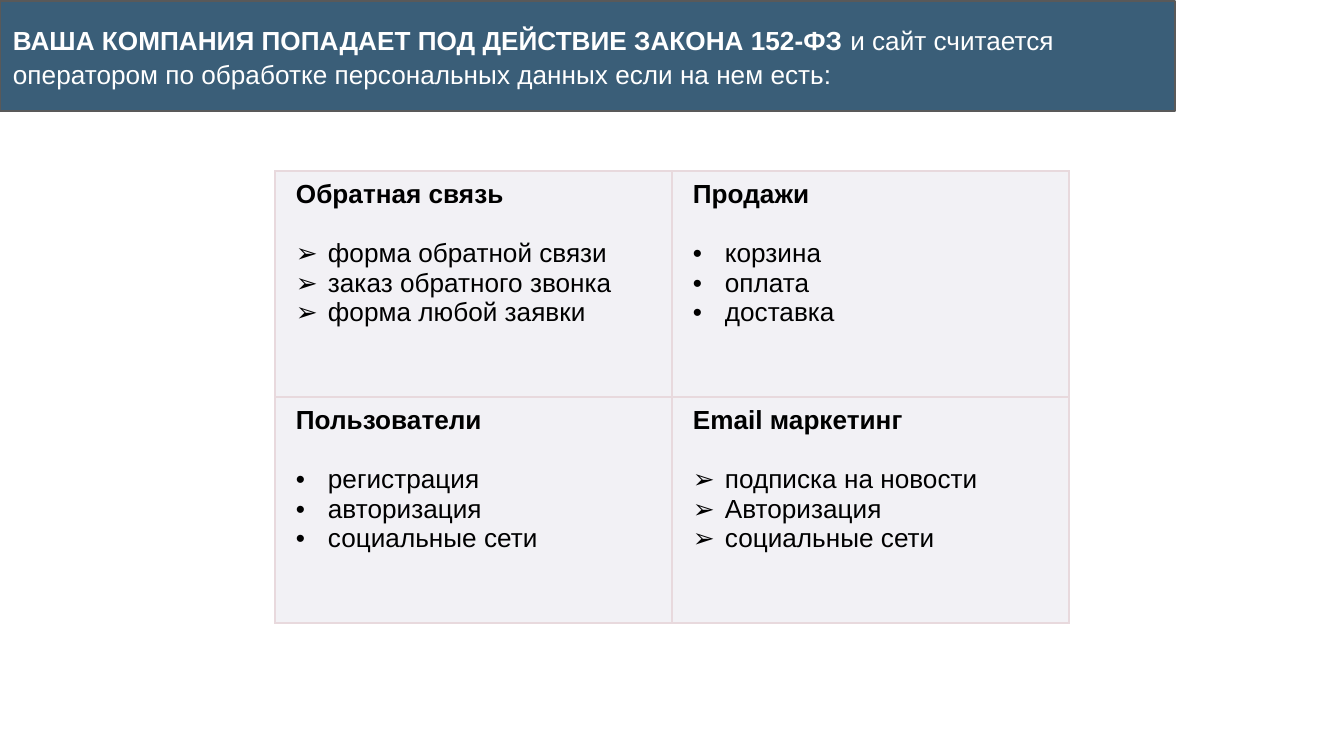
from lxml import etree
from pptx import Presentation
from pptx.dml.color import RGBColor
from pptx.enum.shapes import MSO_SHAPE
from pptx.enum.text import MSO_ANCHOR, PP_ALIGN
from pptx.oxml.ns import qn
from pptx.util import Emu, Pt

RECTANGLE = MSO_SHAPE.RECTANGLE
MIDDLE = MSO_ANCHOR.MIDDLE
LEFT = PP_ALIGN.LEFT

EMU_PER_PX = 914400 / 134.4
SLIDE_SIZE = (1344, 756)
HEADER_BOX = (0, 1, 1175, 110)
TABLE_BOX = (275, 171, 794, 452)

HEADER_FILL, HEADER_LINE = "3A5E78", "595959"
CELL_FILL, CELL_BORDER = "F2F1F5", "E8D9DD"
WHITE, BLACK = "FFFFFF", "000000"
BORDER_WIDTH = Pt(0.75)
BULLET_INDENT = 32
ARROW, DOT = "➢", "•"

HEADER_RUNS = [
    ("ВАША КОМПАНИЯ ПОПАДАЕТ ПОД ДЕЙСТВИЕ ЗАКОНА 152-ФЗ ", True),
    ("и сайт считается оператором по обработке персональных данных "
     "если на нем есть:", False),
]
FEATURES = [
    [("Обратная связь", ARROW,
      ["форма обратной связи", "заказ обратного звонка", "форма любой заявки"]),
     ("Продажи", DOT, ["корзина", "оплата", "доставка"])],
    [("Пользователи", DOT, ["регистрация", "авторизация", "социальные сети"]),
     ("Email маркетинг", ARROW,
      ["подписка на новости", "Авторизация", "социальные сети"])],
]


def px(length):
    return Emu(round(length * EMU_PER_PX))


def color(hex_string):
    return RGBColor.from_string(hex_string)


def set_attributes(target, values):
    for name, value in values.items():
        setattr(target, name, value)


def add_run(paragraph, text, bold, hex_string):
    run = paragraph.add_run()
    run.text = text
    set_attributes(run.font, {"name": "Arial", "size": Pt(14), "bold": bold})
    run.font.color.rgb = color(hex_string)


def add_bullet(paragraph, character):
    properties = paragraph._p.get_or_add_pPr()
    properties.set("marL", str(px(BULLET_INDENT)))
    properties.set("indent", str(-px(BULLET_INDENT)))
    bullet_color = etree.SubElement(properties, qn("a:buClr"))
    etree.SubElement(bullet_color, qn("a:srgbClr"), val=BLACK)
    etree.SubElement(properties, qn("a:buFont"), typeface="Arial")
    etree.SubElement(properties, qn("a:buChar"), char=character)


def add_borders(cell):
    properties = cell._tc.get_or_add_tcPr()
    for side in ("lnL", "lnR", "lnT", "lnB"):
        line = etree.SubElement(properties, qn(f"a:{side}"), w=str(BORDER_WIDTH))
        fill = etree.SubElement(line, qn("a:solidFill"))
        etree.SubElement(fill, qn("a:srgbClr"), val=CELL_BORDER)


def add_header(slide, box):
    shape = slide.shapes.add_shape(RECTANGLE, *map(px, box))
    shape.shadow.inherit = False
    shape.fill.solid()
    shape.fill.fore_color.rgb = color(HEADER_FILL)
    shape.line.color.rgb = color(HEADER_LINE)
    shape.line.width = BORDER_WIDTH
    frame = shape.text_frame
    margins = {f"margin_{side}": px(13) for side in ("left", "top", "right", "bottom")}
    set_attributes(frame, {"word_wrap": True, "vertical_anchor": MIDDLE, **margins})
    paragraph = frame.paragraphs[0]
    set_attributes(paragraph, {"alignment": LEFT, "line_spacing": 1.07})
    for text, bold in HEADER_RUNS:
        add_run(paragraph, text, bold, WHITE)


def fill_cell(cell, title, bullet, items):
    set_attributes(cell, {"margin_left": px(21), "margin_right": px(21),
                          "margin_top": px(9), "margin_bottom": px(9)})
    add_borders(cell)
    cell.fill.solid()
    cell.fill.fore_color.rgb = color(CELL_FILL)
    heading = cell.text_frame.paragraphs[0]
    heading.space_after = Pt(16)
    add_run(heading, title, True, BLACK)
    for item in items:
        paragraph = cell.text_frame.add_paragraph()
        add_bullet(paragraph, bullet)
        add_run(paragraph, item, False, BLACK)


def add_feature_table(slide, box):
    row_count, column_count = len(FEATURES), len(FEATURES[0])
    table = slide.shapes.add_table(row_count, column_count, *map(px, box)).table
    set_attributes(table, {"first_row": False, "horz_banding": False})
    for column in table.columns:
        column.width = px(box[2] / column_count)
    for row, features in zip(table.rows, FEATURES):
        row.height = px(box[3] / row_count)
        for cell, feature in zip(row.cells, features):
            fill_cell(cell, *feature)


def main():
    presentation = Presentation()
    presentation.slide_width, presentation.slide_height = map(px, SLIDE_SIZE)
    slide = presentation.slides.add_slide(presentation.slide_layouts[6])
    # Header band
    add_header(slide, HEADER_BOX)
    # Table of site features
    add_feature_table(slide, TABLE_BOX)
    presentation.save("out.pptx")


if __name__ == "__main__":
    main()
